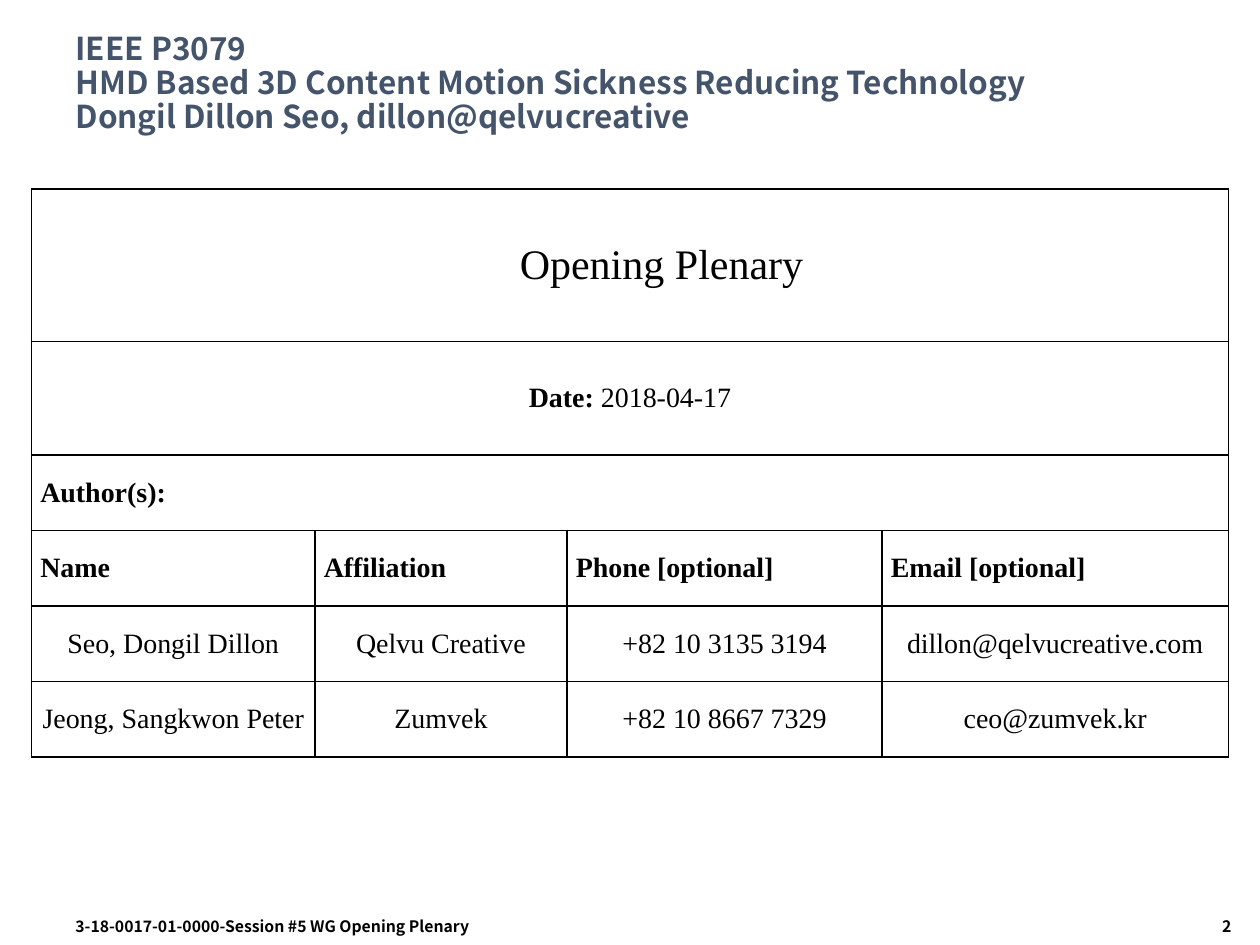
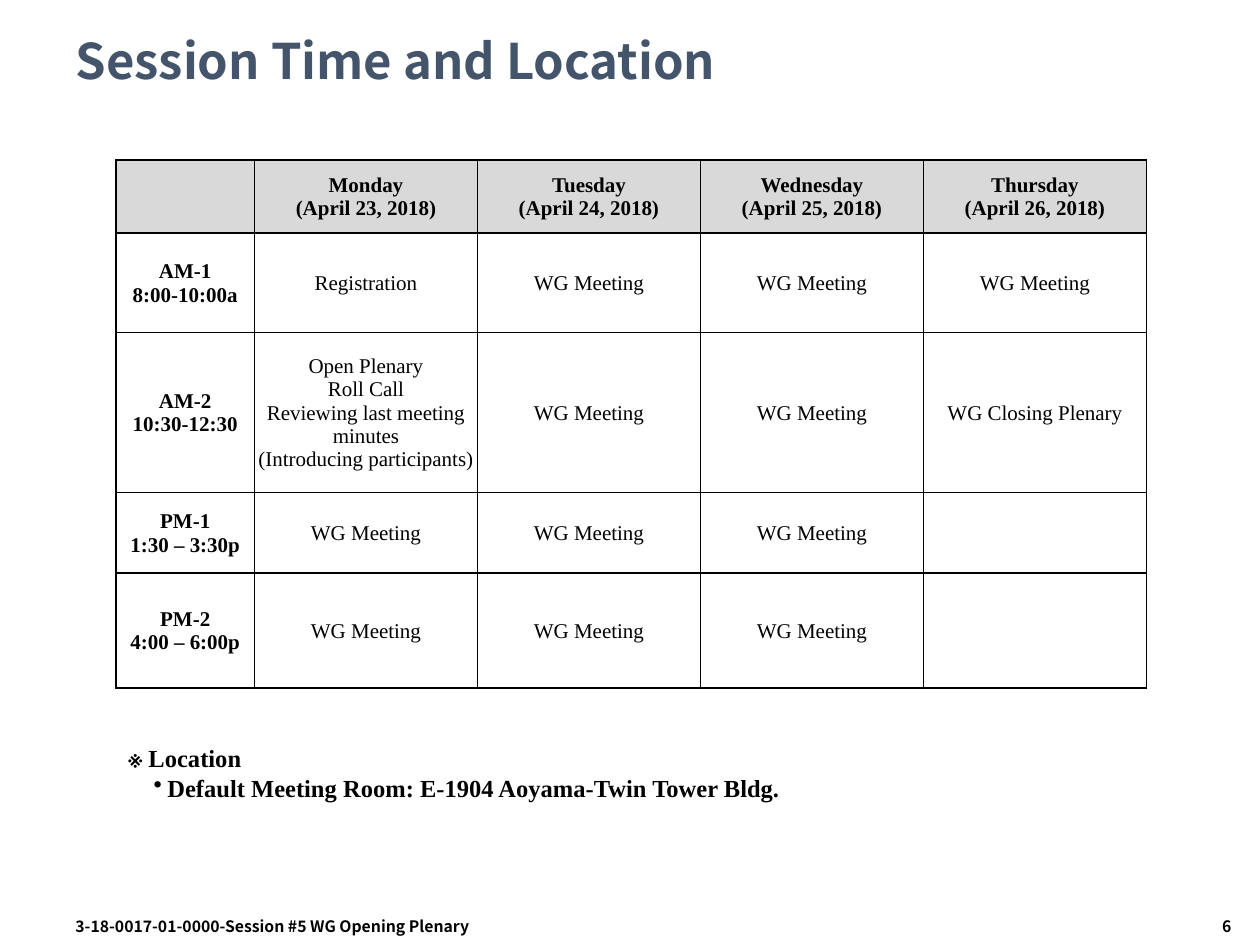
from dataclasses import dataclass

from lxml import etree
from pptx import Presentation, util as u
from pptx.dml.color import RGBColor
from pptx.enum import text as t
from pptx.oxml import ns

PX = 9144  # one px is a hundredth of an inch
HEADING_FONT = "Noto Sans CJK KR"
BODY_FONT = "Times New Roman"
SLATE, BLACK, WHITE, GREY = "44546A", "000000", "FFFFFF", "D9D9D9"
LEFT, CENTER, RIGHT = t.PP_ALIGN.LEFT, t.PP_ALIGN.CENTER, t.PP_ALIGN.RIGHT
FOOTER = "3-18-0017-01-0000-Session #5 WG Opening Plenary"
MEETING = "WG Meeting"


@dataclass
class Box:
    left: int
    top: int
    width: int
    height: int

    def emu(self) -> list:
        return [px(n) for n in (self.left, self.top, self.width, self.height)]


@dataclass
class Cell:
    text: str = ""
    bold: bool = False
    size: int = 16
    align: int = CENTER
    indent: int = 0
    fill: str = WHITE
    columns: int = 1


@dataclass
class Grid:
    box: Box
    widths: list
    heights: list
    margins: tuple  # left, top, right, bottom
    rows: list


def px(length: int) -> int:
    return u.Emu(length * PX)


def color(value: str) -> RGBColor:
    return RGBColor.from_string(value)


def add_span(para, content: str, *, size: int, font: str = BODY_FONT,
             ink: str = BLACK, bold: bool = False) -> None:
    span = para.add_run()
    span.text = content
    span.font.size = u.Pt(size)
    span.font.name = font
    span.font.bold = bold
    span.font.color.rgb = color(ink)


def write(frame, content: str, *, align: int = LEFT, breaks: bool = False,
          spacing: float = 1.0, indent: int = 0, **style) -> None:
    """Write each line as a paragraph, or as one paragraph with line breaks."""
    para = frame.paragraphs[0]
    for number, line in enumerate(content.split("\n")):
        if number and breaks:
            para.add_line_break()
        elif number:
            para = frame.add_paragraph()
        para.alignment = align
        para.line_spacing = spacing
        if indent:
            para._p.get_or_add_pPr().set("marL", str(px(indent)))
        add_span(para, line, **style)


def add_text(page, box: Box, content: str, **style):
    frame = page.shapes.add_textbox(*box.emu()).text_frame
    frame.word_wrap = True
    write(frame, content, **style)
    return frame


def add_bullet(para, indent: int, hanging: int) -> None:
    properties = para._p.get_or_add_pPr()
    properties.set("marL", str(px(indent)))
    properties.set("indent", str(-px(hanging)))
    etree.SubElement(properties, ns.qn("a:buChar")).set("char", "•")


def add_borders(cell) -> None:
    properties = cell._tc.get_or_add_tcPr()
    for side in ("lnL", "lnR", "lnT", "lnB"):
        line = etree.SubElement(properties, ns.qn(f"a:{side}"), w=str(u.Pt(1)))
        fill = etree.SubElement(line, ns.qn("a:solidFill"))
        etree.SubElement(fill, ns.qn("a:srgbClr"), val=BLACK)


def add_grid(page, grid: Grid):
    table = page.shapes.add_table(len(grid.heights), len(grid.widths),
                                  *grid.box.emu()).table
    table.first_row = table.horz_banding = False
    for column, width in zip(table.columns, grid.widths):
        column.width = px(width)
    for row, height in zip(table.rows, grid.heights):
        row.height = px(height)
    for cell in table.iter_cells():
        add_borders(cell)
        cell.vertical_anchor = t.MSO_ANCHOR.MIDDLE
        (cell.margin_left, cell.margin_top, cell.margin_right,
         cell.margin_bottom) = map(px, grid.margins)
        cell.fill.solid()
        cell.fill.fore_color.rgb = color(WHITE)
    for y, row in enumerate(grid.rows):
        for x, entry in enumerate(row):
            cell = table.cell(y, x)
            if entry.columns > 1:
                cell.merge(table.cell(y, x + entry.columns - 1))
            cell.fill.fore_color.rgb = color(entry.fill)
            if entry.text:
                write(cell.text_frame, entry.text, size=entry.size, bold=entry.bold,
                      align=entry.align, indent=entry.indent)
    return table


def add_page(deck, title: str, number: int, *, title_height: int, title_size: int):
    """Add a page with its title, footer and page number."""
    page = deck.slides.add_slide(deck.slide_layouts[5])
    heading = page.shapes.title
    heading.left, heading.top, heading.width, heading.height = Box(
        50, 17, 900, title_height).emu()
    frame = heading.text_frame
    frame.word_wrap = True
    frame.auto_size = t.MSO_AUTO_SIZE.NONE
    frame.vertical_anchor = t.MSO_ANCHOR.MIDDLE
    write(frame, title, breaks=True, spacing=0.9, size=title_size,
          font=HEADING_FONT, ink=SLATE, bold=True)
    small = dict(size=9, font=HEADING_FONT, bold=True)
    add_text(page, Box(50, 723, 442, 27), FOOTER, **small)
    add_text(page, Box(825, 723, 162, 27), str(number), align=RIGHT, **small)
    return page


def build_opening(deck) -> None:
    page = add_page(
        deck,
        "IEEE P3079\nHMD Based 3D Content Motion Sickness Reducing Technology\n"
        "Dongil Dillon Seo, dillon@qelvucreative",
        2, title_height=100, title_size=18)
    headers = ["Name", "Affiliation", "Phone [optional]", "Email [optional]"]
    authors = [
        ["Seo, Dongil Dillon", "Qelvu Creative", "+82 10 3135 3194",
         "dillon@qelvucreative.com"],
        ["Jeong, Sangkwon Peter", "Zumvek", "+82 10 8667 7329", "ceo@zumvek.kr"],
    ]
    rows = [
        [Cell("Opening Plenary", size=24, indent=50, columns=4)],
        [Cell("Date:", bold=True, columns=4)],
        [Cell("Author(s):", bold=True, align=LEFT, columns=4)],
        [Cell(header, bold=True, align=LEFT) for header in headers],
        *[[Cell(detail) for detail in author] for author in authors],
    ]
    table = add_grid(page, Grid(Box(25, 150, 950, 450), [225, 200, 250, 275],
                                [121, 90] + [60] * 4, (7, 0, 7, 0), rows))
    add_span(table.cell(1, 0).text_frame.paragraphs[0], " 2018-04-17", size=16)


def build_schedule(deck) -> None:
    page = add_page(deck, "Session Time and Location", 6,
                    title_height=67, title_size=28)
    frame = add_text(page, Box(92, 585, 858, 57), "※ Location", size=14, bold=True)
    room = frame.add_paragraph()
    add_bullet(room, 31, 11)
    add_span(room, "Default Meeting Room: E-1904 Aoyama-Twin Tower Bldg.",
             size=14, bold=True)

    days = ["Monday", "Tuesday", "Wednesday", "Thursday"]
    headers = [""] + [f"{day}\n(April {date}, 2018)"
                      for date, day in enumerate(days, start=23)]
    plenary = ("Open Plenary\nRoll Call\nReviewing last meeting minutes\n"
               "(Introducing participants)")
    sessions = [
        ("AM-1\n8:00-10:00a", "Registration", MEETING, MEETING, MEETING),
        ("AM-2\n10:30-12:30", plenary, MEETING, MEETING, "WG Closing Plenary"),
        ("PM-1\n1:30 – 3:30p", MEETING, MEETING, MEETING, ""),
        ("PM-2\n4:00 – 6:00p", MEETING, MEETING, MEETING, ""),
    ]
    rows = [[Cell(header, bold=True, size=12, fill=GREY) for header in headers]]
    for slot, *events in sessions:
        rows.append([Cell(slot, bold=True, size=12)]
                    + [Cell(event, size=12) for event in events])
    add_grid(page, Grid(Box(92, 127, 818, 419), [110] + [177] * 4,
                        [58, 79, 127, 64, 91], (1, 1, 1, 0), rows))


def main() -> None:
    deck = Presentation()
    deck.slide_width, deck.slide_height = px(1000), px(750)
    build_opening(deck)
    build_schedule(deck)
    deck.save("out.pptx")


if __name__ == "__main__":
    main()
